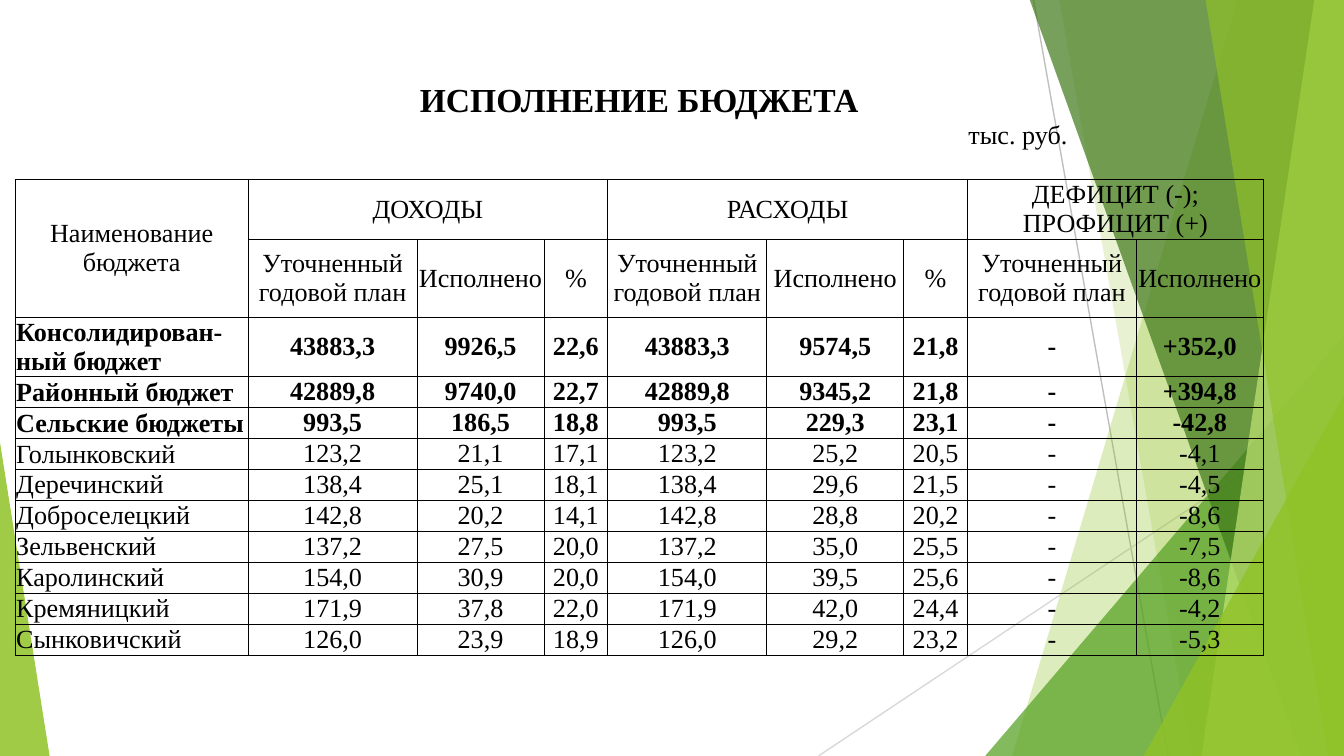
from dataclasses import dataclass
from typing import NamedTuple

from lxml import etree
from pptx import Presentation
from pptx.dml.color import RGBColor
from pptx.enum.shapes import MSO_CONNECTOR, MSO_SHAPE
from pptx.enum.text import MSO_ANCHOR, PP_ALIGN
from pptx.oxml.ns import qn
from pptx.util import Pt

LINE = MSO_CONNECTOR.STRAIGHT
PEAK = MSO_SHAPE.ISOSCELES_TRIANGLE
TOP, MID, LOW = MSO_ANCHOR.TOP, MSO_ANCHOR.MIDDLE, MSO_ANCHOR.BOTTOM
LEFT, MIDST = PP_ALIGN.LEFT, PP_ALIGN.CENTER
FONT = "Times New Roman"
PLAIN = "{2D5ABB26-0587-4C30-8999-92F81FD0307C}"
WIDE, HIGH, OVER = 720, 405, -0.6
COLORS = {
    "ink": "000000",
    "gray": "BFBFBF",
    "pale": "D9D9D9",
    "lime": "90C226",
    "leaf": "54A021",
    "dark": "3F7819",
    "light": "C0E474",
}


@dataclass
class Ray:
    start: tuple[float, float]
    end: tuple[float, float]
    color: str


@dataclass
class Shard:
    top: float
    base: float
    color: str
    alpha: int


@dataclass
class Peak:
    left: float
    top: float
    width: float
    tip: float
    color: str
    alpha: int


class Budget(NamedTuple):
    name: str
    plan: str
    got: str
    rate: str
    spent: str
    share: str
    gap: str
    bold: bool = False


RAYS = [
    Ray((553.7, 0), (625.7, HIGH), "gray"),
    Ray((WIDE, 217.4), (438.5, HIGH), "pale"),
]
DECOR = [
    Shard(663.1, 542.2, "lime", 30),
    Shard(567.4, 638.6, "lime", 20),
    Peak(527.8, 180, 192.2, 1, "leaf", 72),
    Shard(551.5, 697, "dark", 70),
    Shard(704.2, 643.7, "light", 70),
    Shard(645.8, 711.4, "lime", 65),
    Peak(612.7, 211.7, 107.3, 1, "lime", 80),
    Peak(0, 236.9, 26.6, 0, "lime", 85),
]
BUDGETS = [
    Budget("Консолидирован-ный бюджет", "43883,3", "9926,5", "22,6", "9574,5", "21,8", "+352,0", True),
    Budget("Районный бюджет", "42889,8", "9740,0", "22,7", "9345,2", "21,8", "+394,8", True),
    Budget("Сельские бюджеты", "993,5", "186,5", "18,8", "229,3", "23,1", "-42,8", True),
    Budget("Голынковский", "123,2", "21,1", "17,1", "25,2", "20,5", "-4,1"),
    Budget("Деречинский", "138,4", "25,1", "18,1", "29,6", "21,5", "-4,5"),
    Budget("Доброселецкий", "142,8", "20,2", "14,1", "28,8", "20,2", "-8,6"),
    Budget("Зельвенский", "137,2", "27,5", "20,0", "35,0", "25,5", "-7,5"),
    Budget("Каролинский", "154,0", "30,9", "20,0", "39,5", "25,6", "-8,6"),
    Budget("Кремяницкий", "171,9", "37,8", "22,0", "42,0", "24,4", "-4,2"),
    Budget("Сынковичский", "126,0", "23,9", "18,9", "29,2", "23,2", "-5,3"),
]
COLS = [124.8, 72.5, 18, 47, 21, 34.2, 85.2, 15.1, 58.3, 6.6, 27.6, 90.5, 37.2, 30.8]
ROWS = [20.9, 31.6, 31.1, 41.8, 31.6] + [16.6] * 9
SPANS = [(1, 2), (3, 2), (5, 1), (6, 1), (7, 2), (9, 2), (11, 1), (12, 2)]
GROUPS = [(1, 5, "ДОХОДЫ"), (6, 5, "РАСХОДЫ"), (11, 3, "ДЕФИЦИТ (-); ПРОФИЦИТ (+)")]
PLAN, DONE = "Уточненный годовой план", "Исполнено"
HEADS = [PLAN, DONE, "%", PLAN, DONE, "%", PLAN, DONE]


def shade(color: str) -> RGBColor:
    return RGBColor.from_string(COLORS[color])


def tint(shape, color: str, alpha: int) -> None:
    shape.shadow.inherit = False
    shape.line.fill.background()
    shape.fill.solid()
    shape.fill.fore_color.rgb = shade(color)
    mark = shape.element.xpath("./p:spPr/a:solidFill/a:srgbClr")[0]
    etree.SubElement(mark, qn("a:alpha"), val=str(alpha * 1000))


def draw_ray(slide, ray: Ray) -> None:
    ends = [Pt(n) for n in (*ray.start, *ray.end)]
    line = slide.shapes.add_connector(LINE, *ends)
    line.line.color.rgb = shade(ray.color)
    line.line.width = Pt(0.75)
    etree.SubElement(line.element.spPr, qn("a:effectLst"))


def draw_shard(slide, shard: Shard) -> None:
    pen = slide.shapes.build_freeform(Pt(shard.top), Pt(OVER))
    spots = [(WIDE, OVER), (WIDE, HIGH), (shard.base, HIGH)]
    pen.add_line_segments([(Pt(x), Pt(y)) for x, y in spots], close=True)
    tint(pen.convert_to_shape(), shard.color, shard.alpha)


def draw_peak(slide, peak: Peak) -> None:
    box = (peak.left, peak.top, peak.width, HIGH - peak.top)
    shape = slide.shapes.add_shape(PEAK, *[Pt(n) for n in box])
    shape.adjustments[0] = peak.tip
    tint(shape, peak.color, peak.alpha)


def edge(cell, sides: str) -> None:
    props = cell._tc.get_or_add_tcPr()
    for spot, side in enumerate("LRTB"):
        line = etree.Element(qn(f"a:ln{side}"), w=str(Pt(0.5)))
        if side in sides:
            fill = etree.SubElement(line, qn("a:solidFill"))
            etree.SubElement(fill, qn("a:srgbClr"), val=COLORS["ink"])
        else:
            etree.SubElement(line, qn("a:noFill"))
        props.insert(spot, line)


def write(cell, text: str, size: float = 14, bold: bool = False,
          align=MIDST, anchor=MID) -> None:
    cell.text_frame.text = text
    cell.vertical_anchor = anchor
    for para in cell.text_frame.paragraphs:
        para.alignment = align
        para.font.name = FONT
        para.font.size = Pt(size)
        para.font.bold = bold
        para.font.color.rgb = shade("ink")


def join(table, row: int, col: int, wide: int, high: int = 1):
    cell = table.cell(row, col)
    if wide > 1 or high > 1:
        cell.merge(table.cell(row + high - 1, col + wide - 1))
    return cell


def draw_table(slide) -> None:
    frame = slide.shapes.add_table(
        len(ROWS), len(COLS), Pt(8.2), Pt(43.9), Pt(sum(COLS)), Pt(sum(ROWS)))
    frame.element.xpath(".//a:tableStyleId")[0].text = PLAIN
    table = frame.table
    table.first_row = table.horz_banding = False
    for col, wide in zip(table.columns, COLS):
        col.width = Pt(wide)
    for num, (row, high) in enumerate(zip(table.rows, ROWS)):
        row.height = Pt(high)
        for cell in row.cells:
            cell.margin_left = cell.margin_right = Pt(0.5)
            cell.margin_top = cell.margin_bottom = Pt(0.4)
            cell.fill.background()
            edge(cell, ("", "B")[num] if num < 2 else "LRTB")

    write(join(table, 0, 0, len(COLS)), "ИСПОЛНЕНИЕ БЮДЖЕТА", 18, True)
    for col in (2, 4, 6, 8):
        join(table, 1, col, 2)
    write(join(table, 1, 11, 2), "тыс. руб.", align=LEFT, anchor=TOP)
    write(join(table, 2, 0, 1, 2), "Наименование\nбюджета")
    for col, wide, text in GROUPS:
        write(join(table, 2, col, wide), text)
    for (col, wide), text in zip(SPANS, HEADS):
        write(join(table, 3, col, wide), text)
    for row, item in enumerate(BUDGETS, 4):
        write(table.cell(row, 0), item.name, bold=item.bold, align=LEFT, anchor=LOW)
        facts = [item.plan, item.got, item.rate, item.plan,
                 item.spent, item.share, "-", item.gap]
        for (col, wide), text in zip(SPANS, facts):
            write(join(table, row, col, wide), text, bold=item.bold)


def main() -> None:
    deck = Presentation()
    deck.slide_width, deck.slide_height = Pt(WIDE), Pt(HIGH)
    slide = deck.slides.add_slide(deck.slide_layouts[6])
    for ray in RAYS:
        draw_ray(slide, ray)
    for part in DECOR:
        if isinstance(part, Shard):
            draw_shard(slide, part)
        else:
            draw_peak(slide, part)
    draw_table(slide)
    deck.save("out.pptx")


if __name__ == "__main__":
    main()
